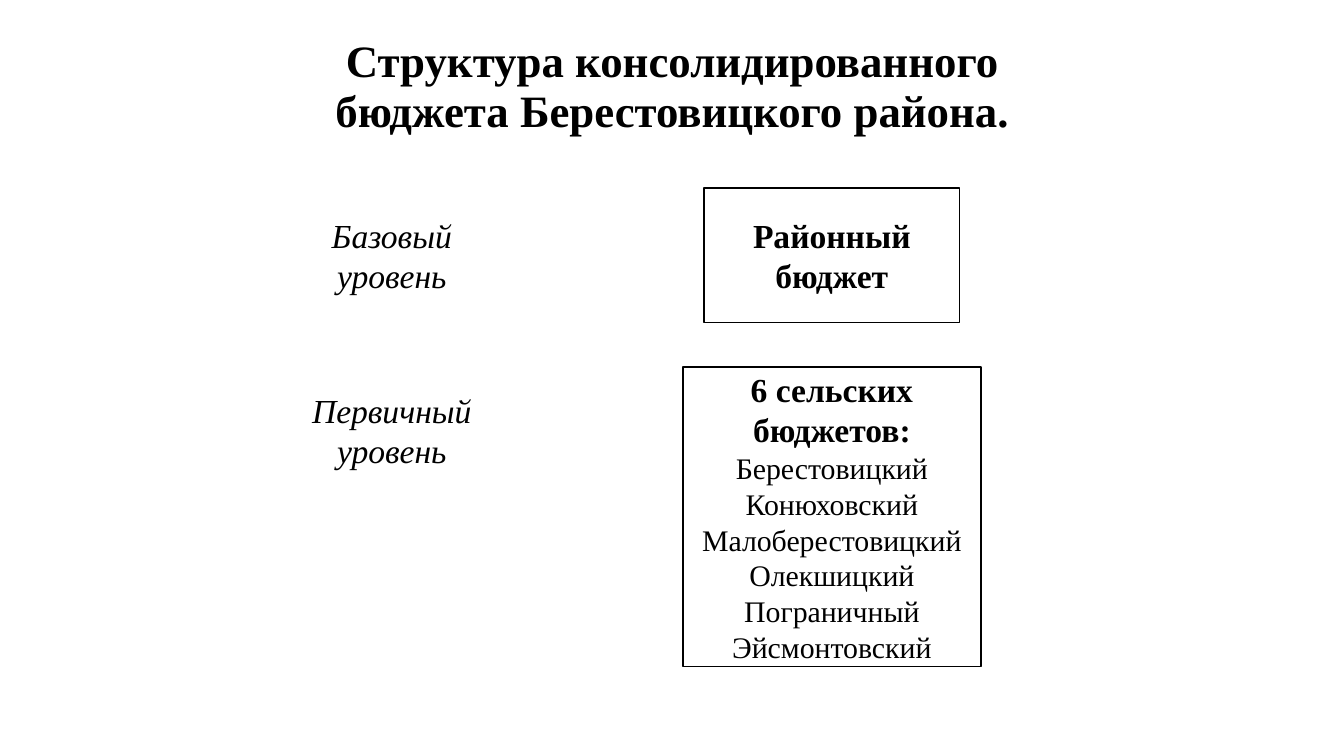
import pptx
import pptx.dml.color
import pptx.enum.shapes
import pptx.enum.text
import pptx.util
from pptx.util import Inches

# Content
TITLE = "Структура консолидированного\vбюджета Берестовицкого района."
TABLES = [
    {"text": "", "top": 1.79, "height": 1.02},
    {"text": TITLE, "top": 0.14, "height": 2.14},
]
LEVELS = [
    {"label": "Базовый уровень", "label_top": 1.4,
     "budget": "Районный бюджет", "councils": [],
     "box": (5.24, 1.4, 1.9, 1)},
    {"label": "Первичный уровень", "label_top": 2.7,
     "budget": "6 сельских бюджетов:",
     "councils": ["Берестовицкий", "Конюховский", "Малоберестовицкий",
                  "Олекшицкий", "Пограничный", "Эйсмонтовский"],
     "box": (5.08, 2.73, 2.22, 2.23)},
]

# Style
BLACK = pptx.dml.color.RGBColor(0, 0, 0)
WHITE = pptx.dml.color.RGBColor(255, 255, 255)
FONT = "Times New Roman"
TITLE_SIZE, HEADING_SIZE, COUNCIL_SIZE = 24, 18, 16
TABLE_LEFT, TABLE_WIDTH, TITLE_MARGIN = 0.12, 9.76, 0.14
LABEL_LEFT, LABEL_WIDTH, LABEL_HEIGHT = 2.09, 1.65, 1


def format_paragraph(paragraph, size, bold=False, italic=False):
    paragraph.alignment = pptx.enum.text.PP_ALIGN.CENTER
    for run in paragraph.runs:
        run.font.name = FONT
        run.font.size = pptx.util.Pt(size)
        run.font.bold = bold
        run.font.italic = italic
        run.font.color.rgb = BLACK


def add_title_table(slide, text, top, height):
    """Place a one-cell table without fill across the slide."""
    place = (TABLE_LEFT, top, TABLE_WIDTH, height)
    table = slide.shapes.add_table(1, 1, *map(Inches, place)).table
    table.first_row = table.horz_banding = False
    cell = table.cell(0, 0)
    cell.fill.background()
    if text:
        cell.text_frame.text = text
        cell.vertical_anchor = pptx.enum.text.MSO_ANCHOR.TOP
        cell.margin_left = cell.margin_right = Inches(0.01)
        cell.margin_top, cell.margin_bottom = Inches(TITLE_MARGIN), 0
        format_paragraph(cell.text_frame.paragraphs[0], TITLE_SIZE, bold=True)


def add_box(slide, place, lines, outlined):
    """Draw a white rectangle; its first line is the heading."""
    box = slide.shapes.add_shape(
        pptx.enum.shapes.MSO_SHAPE.RECTANGLE, *map(Inches, place))
    box.shadow.inherit = False
    box.fill.solid()
    box.fill.fore_color.rgb = WHITE
    if outlined:
        box.line.color.rgb = BLACK
        box.line.width = pptx.util.Pt(1)
    else:
        box.line.fill.background()
    frame = box.text_frame
    frame.word_wrap = True
    frame.vertical_anchor = pptx.enum.text.MSO_ANCHOR.MIDDLE
    frame.text = "\n".join(lines)
    heading, *councils = frame.paragraphs
    format_paragraph(heading, HEADING_SIZE, bold=outlined, italic=not outlined)
    for council in councils:
        format_paragraph(council, COUNCIL_SIZE)


def main():
    deck = pptx.Presentation()
    deck.slide_width = Inches(10)
    deck.slide_height = deck.slide_width * 9 // 16
    slide = deck.slides.add_slide(deck.slide_layouts[6])

    # Tables, the upper one holding the title
    for table in TABLES:
        add_title_table(slide, **table)

    # Budget boxes
    for level in LEVELS:
        add_box(slide, level["box"],
                [level["budget"], *level["councils"]], outlined=True)

    # Level labels
    for level in LEVELS:
        add_box(slide,
                (LABEL_LEFT, level["label_top"], LABEL_WIDTH, LABEL_HEIGHT),
                [level["label"]], outlined=False)

    deck.save("out.pptx")


if __name__ == "__main__":
    main()
